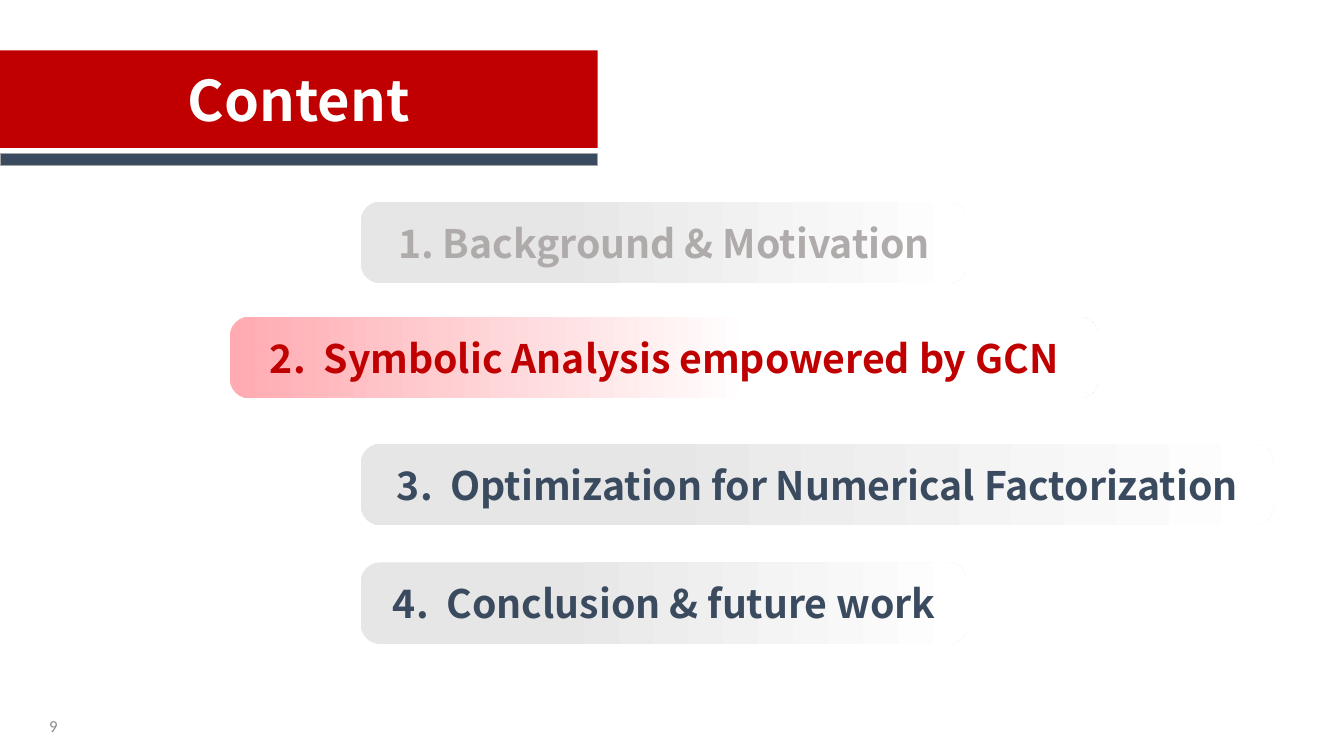
from pptx import Presentation
from pptx.dml.color import RGBColor
from pptx.enum.shapes import MSO_SHAPE as SHAPE
from pptx.enum.text import MSO_ANCHOR as ANCHOR, PP_ALIGN as ALIGN
from pptx.util import Cm, Pt

COLORS = {
    "red": "C00000", "navy": "3A4B5F", "muted": "AFABAB", "white": "FFFFFF",
    "pink": "FFABB1", "gray": "E7E6E6", "border": "A6A6A6", "number": "8C8C8C",
}
HEADING_FONT = "Noto Sans CJK SC"
TITLE = "Content"
PAGE_NUMBER = "9"
GRAY_FADE = ("gray", 0.31, 1.0)
PINK_FADE = ("pink", 0.0, 0.6)
SECTIONS = [
    ("1. Background & Motivation", 9.09, 5.08, 15.29, "muted", GRAY_FADE),
    ("2.  Symbolic Analysis empowered by GCN", 5.79, 7.98, 21.89, "red", PINK_FADE),
    ("3.  Optimization for Numerical Factorization", 9.09, 11.18, 23.01, "navy", GRAY_FADE),
    ("4.  Conclusion & future work", 9.09, 14.17, 15.29, "navy", GRAY_FADE),
]
SECTION_HEIGHT = 2.06
BANNER_WIDTH = 15.06


def rgb(name):
    return RGBColor.from_string(COLORS[name])


def add_box(kind, left, top, width, height):
    s = slide.shapes.add_shape(kind, Cm(left), Cm(top), Cm(width), Cm(height))
    s.shadow.inherit = False
    s.line.fill.background()
    return s


def fill_solid(s, color):
    s.fill.solid()
    s.fill.fore_color.rgb = rgb(color)


def set_text(s, text, size, color, font=HEADING_FONT, bold=True, align=ALIGN.CENTER):
    tf = s.text_frame
    tf.text = text
    tf.word_wrap = True
    tf.vertical_anchor = ANCHOR.MIDDLE
    p = tf.paragraphs[0]
    p.alignment = align
    r = p.runs[0]
    r.font.name = font
    r.font.size = Pt(size)
    r.font.bold = bold
    r.font.color.rgb = rgb(color)


prs = Presentation()
prs.slide_width, prs.slide_height = Cm(33.87), Cm(19.05)
slide = prs.slides.add_slide(prs.slide_layouts[6])

for text, left, top, width, color, (tint, start, end) in SECTIONS:
    s = add_box(SHAPE.ROUNDED_RECTANGLE, left, top, width, SECTION_HEIGHT)
    s.adjustments[0] = 0.24
    s.fill.gradient()
    s.fill.gradient_angle = 0
    for stop, name, position in zip(s.fill.gradient_stops, (tint, "white"), (start, end)):
        stop.color.rgb = rgb(name)
        stop.position = position
    set_text(s, text, 28, color)

banner = add_box(SHAPE.RECTANGLE, 0, 1.27, BANNER_WIDTH, 2.46)
fill_solid(banner, "red")
set_text(banner, TITLE, 40, "white")

stripe = add_box(SHAPE.RECTANGLE, 0, 3.87, BANNER_WIDTH, 0.3)
fill_solid(stripe, "navy")
stripe.line.color.rgb = rgb("border")
stripe.line.width = Pt(1)

number = slide.shapes.add_textbox(Cm(0.43), Cm(17.78), Cm(1.27), Cm(1.02))
set_text(number, PAGE_NUMBER, 12, "number", "Calibri", False, ALIGN.RIGHT)

prs.save("out.pptx")
